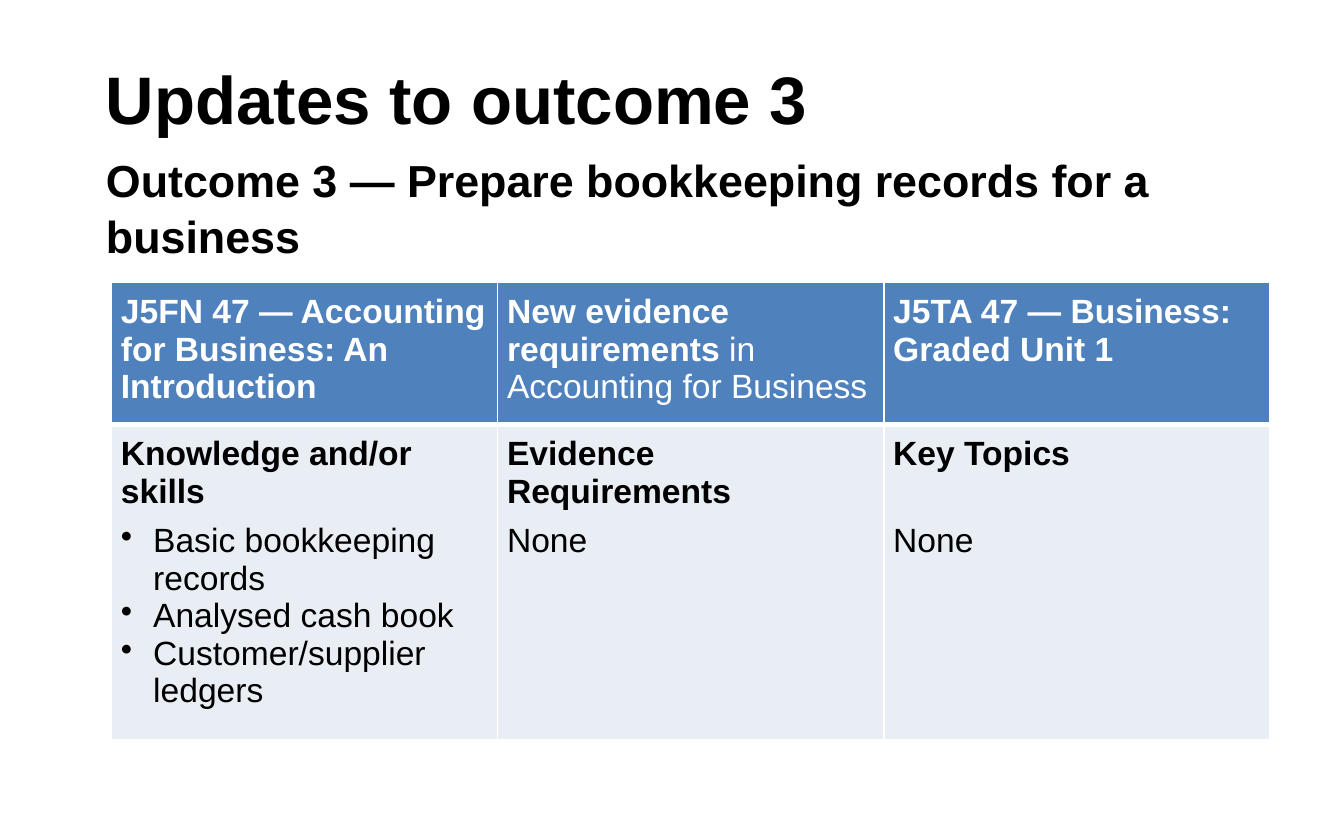
from dataclasses import dataclass

from lxml import etree
from pptx import Presentation
from pptx.dml.color import RGBColor
from pptx.enum import text
from pptx.oxml import ns
from pptx.util import Inches, Pt


@dataclass(frozen=True)
class Theme:
    face: str = "Arial"
    black: str = "000000"
    white: str = "FFFFFF"
    blue: str = "4F81BD"
    pale: str = "E9EDF4"
    title: int = 36
    lead: int = 24
    body: int = 18


THEME = Theme()

HEADS = [
    [("J5FN 47 — Accounting for Business: An Introduction", True)],
    [("New evidence requirements", True), (" in Accounting for Business", False)],
    [("J5TA 47 — Business: Graded Unit 1", True)],
]
# Each column: heading, plain text, bullets; \v is a line break
TOPICS = [
    ("Knowledge and/or skills", [],
     ["Basic bookkeeping records", "Analysed cash book", "Customer/supplier ledgers"]),
    ("Evidence Requirements", ["None"], []),
    ("Key Topics\v", ["None"], []),
]


def style(para, size, color, bold=None):
    font = para.font
    font.name, font.size, font.bold = THEME.face, Pt(size), bold
    font.color.rgb = RGBColor.from_string(color)


def add_text(slide, box, words, size, inset=0.05, anchor=text.MSO_ANCHOR.TOP, gap=1.0):
    frame = slide.shapes.add_textbox(*map(Inches, box)).text_frame
    frame.word_wrap = True
    frame.margin_top = Inches(inset)
    frame.vertical_anchor = anchor
    para = frame.paragraphs[0]
    para.text = words
    para.line_spacing = gap
    style(para, size, THEME.black, True)


def add_bullet(para):
    props = para._p.get_or_add_pPr()
    props.set("marL", str(Inches(0.24)))
    props.set("indent", str(-Inches(0.24)))
    etree.SubElement(props, ns.qn("a:buChar")).set("char", "•")


def set_cell(cell, fill, top, bottom):
    """Set the insets, white borders and fill; top and bottom are line widths in points."""
    cell.margin_left = cell.margin_right = Inches(0.07)
    cell.margin_top = cell.margin_bottom = Inches(0.08)
    props = cell._tc.get_or_add_tcPr()
    for side, width in zip("LRTB", (1, 1, top, bottom)):
        line = etree.SubElement(props, ns.qn(f"a:ln{side}"), w=str(Pt(width)))
        solid = etree.SubElement(line, ns.qn("a:solidFill"))
        etree.SubElement(solid, ns.qn("a:srgbClr"), val=THEME.white)
    cell.fill.solid()
    cell.fill.fore_color.rgb = RGBColor.from_string(fill)


def fill_head(cell, runs):
    set_cell(cell, THEME.blue, 1, 3)
    para = cell.text_frame.paragraphs[0]
    style(para, THEME.body, THEME.white)
    for words, bold in runs:
        run = para.add_run()
        run.text = words
        run.font.bold = bold


def fill_topic(cell, head, plain, bullets):
    set_cell(cell, THEME.pale, 3, 1)
    frame = cell.text_frame
    lines = [head, *plain, *bullets]
    for i, words in enumerate(lines):
        para = frame.paragraphs[0] if i == 0 else frame.add_paragraph()
        para.text = words
        if words in bullets:
            add_bullet(para)
        else:
            para.space_after = Pt(6)
        style(para, THEME.body, THEME.black, i == 0)


def add_grid(slide, box):
    grid = slide.shapes.add_table(2, len(HEADS), *map(Inches, box)).table
    for row, high in zip(grid.rows, (1.04, box[3] - 1.04)):
        row.height = Inches(high)
    for col, (head, topic) in enumerate(zip(HEADS, TOPICS)):
        fill_head(grid.cell(0, col), head)
        fill_topic(grid.cell(1, col), *topic)


def main():
    deck = Presentation()
    deck.slide_width, deck.slide_height = Inches(10), Inches(6.25)
    slide = deck.slides.add_slide(deck.slide_layouts[6])
    add_text(slide, (0.69, 0.33, 8.62, 0.9), "Updates to outcome 3", THEME.title, inset=0.1)
    add_text(slide, (0.69, 1.08, 9.33, 0.91),
             "Outcome 3 — Prepare bookkeeping records for a business",
             THEME.lead, anchor=text.MSO_ANCHOR.MIDDLE, gap=1.05)
    add_grid(slide, (0.83, 2.1, 8.62, 3.38))
    deck.save("out.pptx")


if __name__ == "__main__":
    main()
